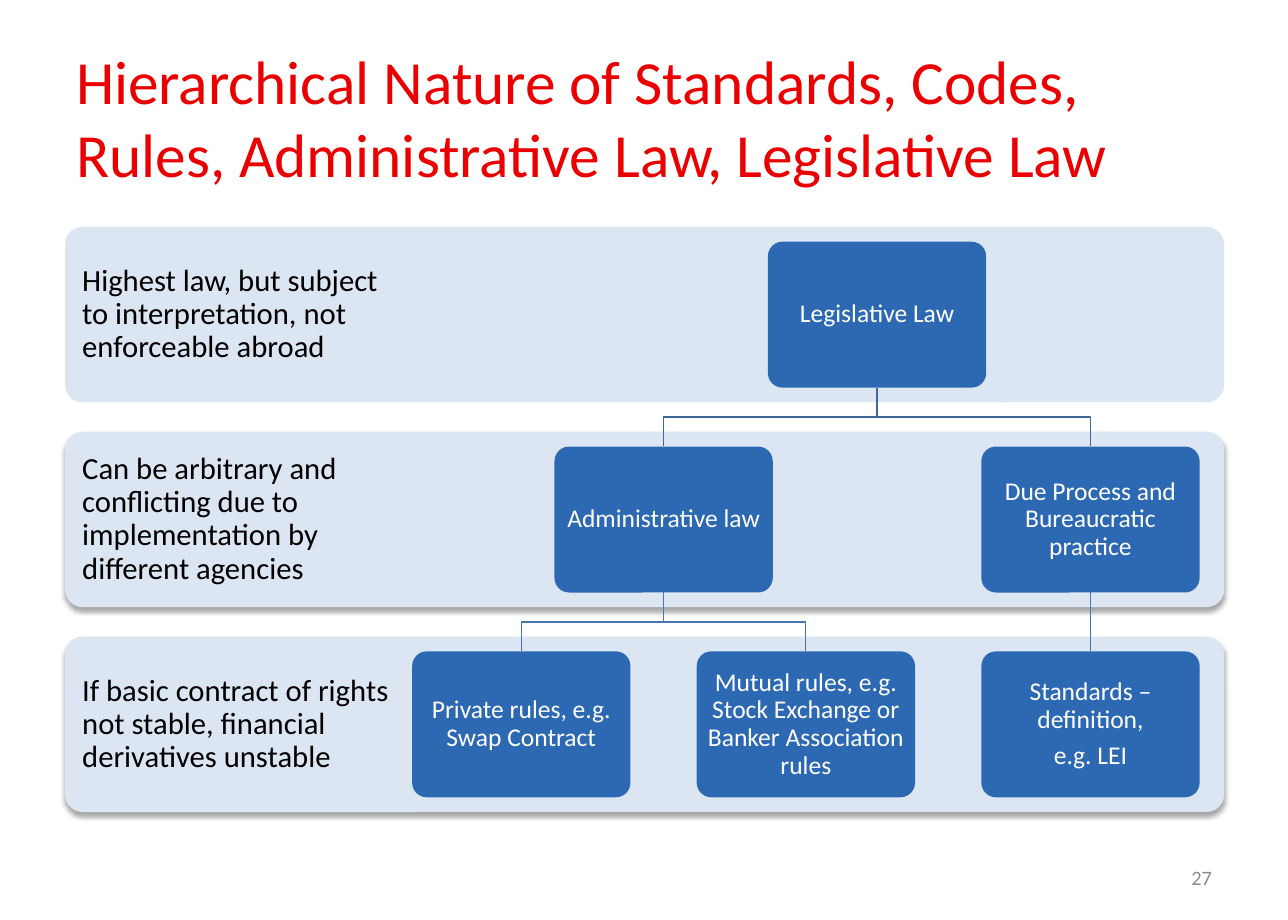
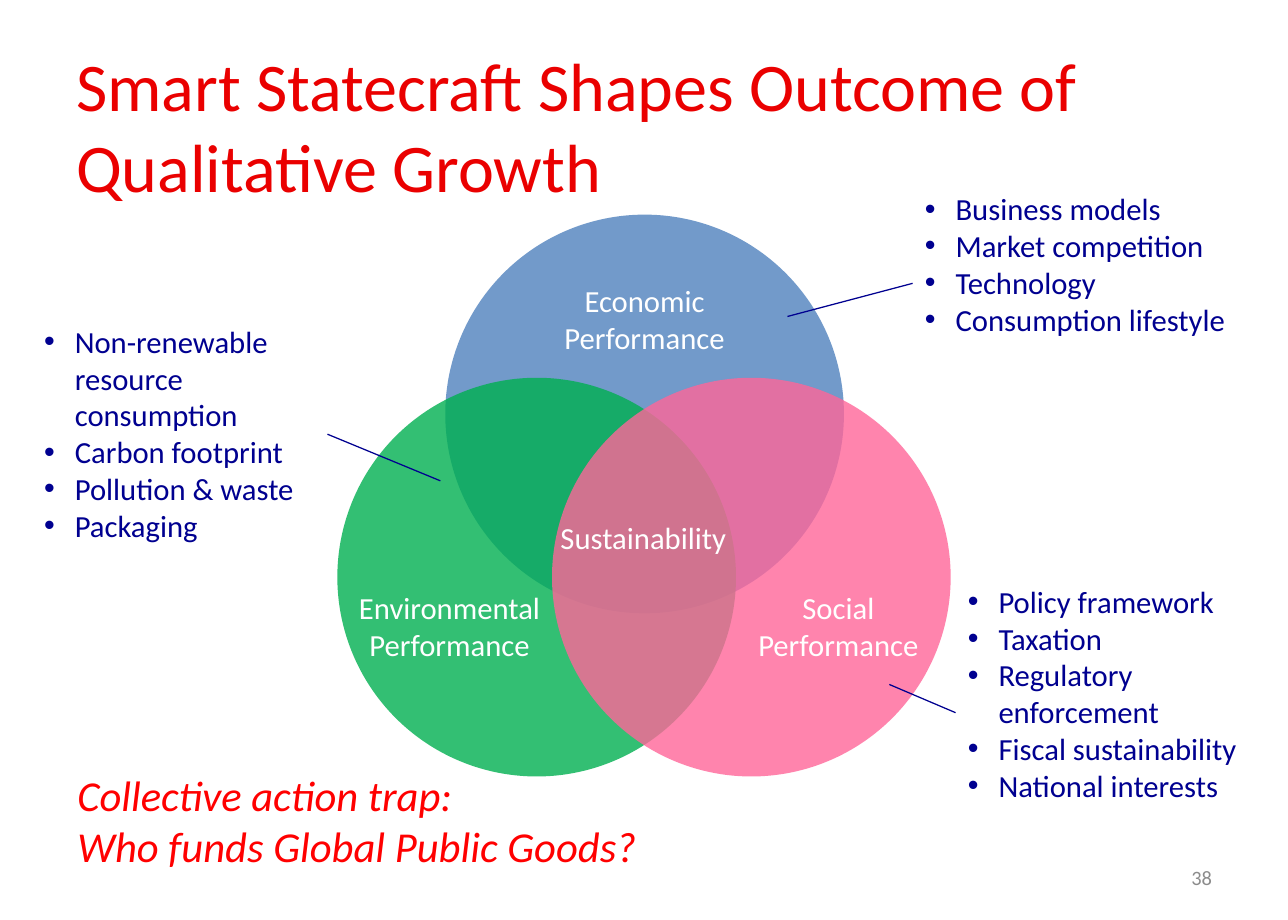
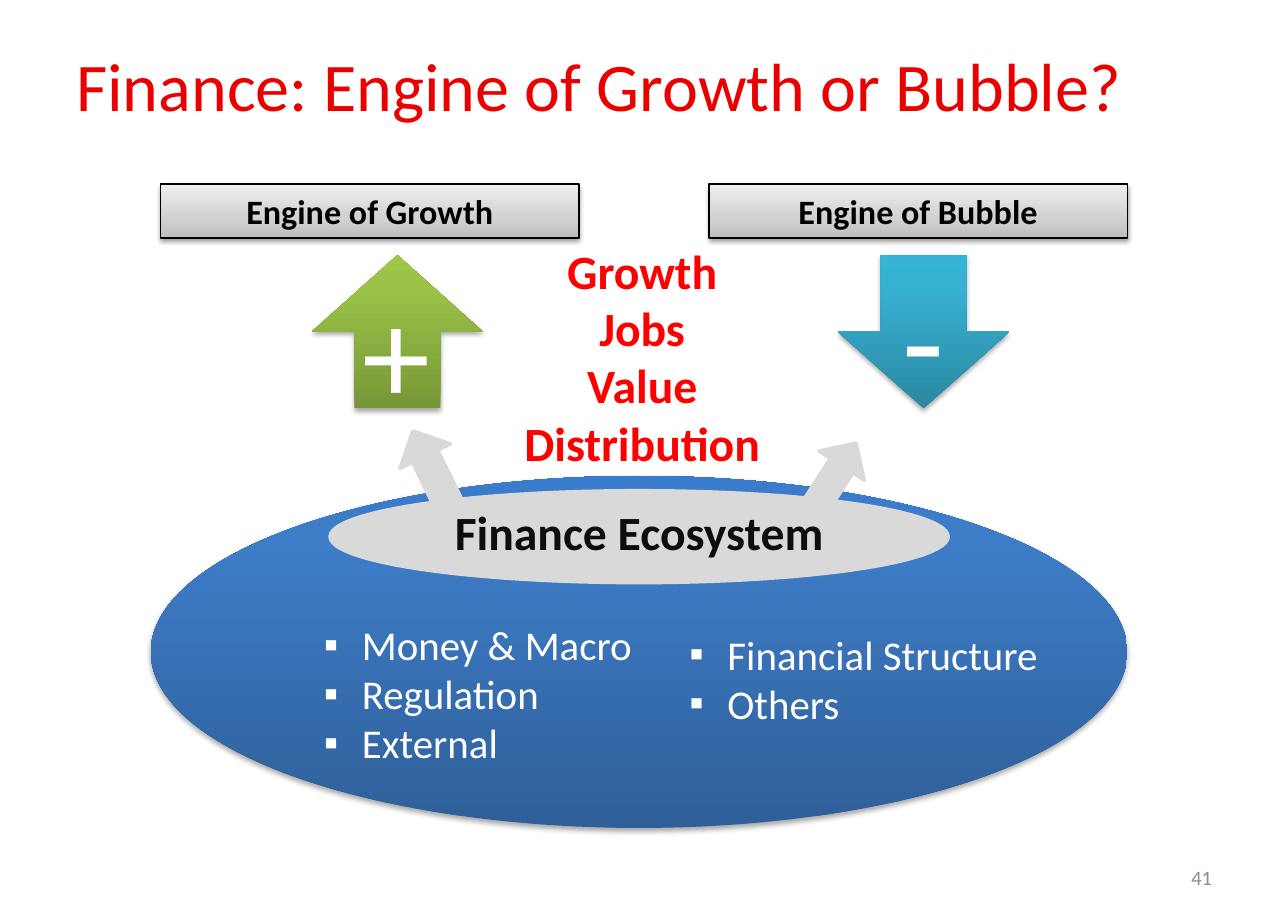
from lxml.etree import SubElement
from pptx import Presentation
from pptx.dml.color import RGBColor
from pptx.enum.shapes import MSO_CONNECTOR as Connector, MSO_SHAPE as Kind
from pptx.enum.text import MSO_ANCHOR as Anchor, MSO_AUTO_SIZE as AutoSize, PP_ALIGN as Align
from pptx.oxml.ns import qn
from pptx.util import Inches, Pt

# Shared style
FONT = "Calibri"
TITLE_RED, ACCENT_RED, NAVY = "EA0000", "FF0000", "000090"
WHITE, BLACK, PAGE_GREY, SILVER = "FFFFFF", "000000", "8C8C8C", "D9D9D9"
BAND_BLUE, NODE_BLUE = "DCE6F2", "2C69B2"
PLATE_STEEL = [(0, "BDBDBD"), (35, "D1D1D1"), (100, "EEEEEE")]
BASE_BLUE = [(0, "2F5F99"), (80, "3D7CC7"), (100, "3A7CCB")]
UP_GREEN = [(0, "779737"), (80, "9BC348"), (100, "9DC746")]
DOWN_TEAL = [(0, "2A88A2"), (80, "37B1D2"), (100, "34B4D6")]
MARGINS = (0.1, 0.05, 0.1, 0.05)
TITLE_ONLY, TWO_CONTENT, COMPARISON = 5, 3, 4


def rgb(code):
    return RGBColor.from_string(code)


class Deck:
    """Holds the presentation, its style and the slide being drawn."""

    def __init__(self):
        self.prs = Presentation()
        self.prs.slide_width, self.prs.slide_height = Inches(10.5), Inches(7.5)

    def start_slide(self, layout, title, size, page, width=9.45):
        self.slide = self.prs.slides.add_slide(self.prs.slide_layouts[layout])
        self.shapes = self.slide.shapes
        self.bodies = iter([p for p in self.slide.placeholders
                            if p.placeholder_format.idx])
        self.fill_placeholder(self.shapes.title, [title], (0.52, 0.3, width, 1.25),
                              size=size, color=TITLE_RED)
        self.text([str(page)], (7.53, 6.95, 2.45, 0.4), size=12, color=PAGE_GREY,
                  align=Align.RIGHT, anchor=Anchor.MIDDLE)

    def set_text(self, frame, lines, size=18, color=WHITE, bold=False, italic=False,
                 align=Align.CENTER, anchor=Anchor.TOP, margins=MARGINS, spacing=1,
                 after=0, wrap=True):
        frame.text = "\n".join(lines)
        frame.word_wrap, frame.auto_size = wrap, AutoSize.NONE
        frame.vertical_anchor = anchor
        (frame.margin_left, frame.margin_top,
         frame.margin_right, frame.margin_bottom) = map(Inches, margins)
        for para in frame.paragraphs:
            para.alignment, para.line_spacing = align, spacing
            para.space_before, para.space_after = Pt(0), Pt(after)
            font = para.font
            font.name, font.size = FONT, Pt(size)
            font.bold, font.italic = bold, italic
            font.color.rgb = rgb(color)

    def text(self, lines, at, **style):
        box = self.shapes.add_textbox(*map(Inches, at))
        self.set_text(box.text_frame, lines, **style)

    def fill_placeholder(self, holder, lines, at, **style):
        holder.left, holder.top, holder.width, holder.height = map(Inches, at)
        # Bring it in front of what is already drawn
        holder.element.getparent().append(holder.element)
        self.set_text(holder.text_frame, lines, align=Align.LEFT, **style)

    def body(self, lines, at, bullet=None, indent=0, **style):
        holder = next(self.bodies)
        self.fill_placeholder(holder, lines, at, **style)
        for para in holder.text_frame.paragraphs:
            props = para._p.get_or_add_pPr()
            props.set("marL", str(Inches(indent)))
            props.set("indent", str(-Inches(indent)))
            mark = props.makeelement(qn("a:buChar" if bullet else "a:buNone"))
            if bullet:
                mark.set("char", bullet)
            props.find(qn("a:defRPr")).addprevious(mark)

    def shape(self, kind, at, fill, alpha=None, line=None, line_width=0.75,
              shadow=None, rotation=0, corner=None, lines=None, **style):
        item = self.shapes.add_shape(kind, *map(Inches, at))
        item.rotation = rotation
        if corner:
            item.adjustments[0] = corner
        if isinstance(fill, list):
            self.gradient(item, fill)
        else:
            item.fill.solid()
            item.fill.fore_color.rgb = rgb(fill)
        if alpha:
            color = item.element.spPr.find(f"{qn('a:solidFill')}/{qn('a:srgbClr')}")
            SubElement(color, qn("a:alpha"), val=str(alpha * 1000))
        self.outline(item, line, line_width)
        if shadow:
            effects = item.element.spPr.find(qn("a:effectLst"))
            cast = SubElement(effects, qn("a:outerShdw"), blurRad=str(Pt(3.1)),
                              dist=str(Pt(1.8)), dir="5400000", rotWithShape="0")
            color = SubElement(cast, qn("a:srgbClr"), val=BLACK)
            SubElement(color, qn("a:alpha"), val=str(shadow * 1000))
        if lines:
            self.set_text(item.text_frame, lines, anchor=Anchor.MIDDLE, **style)

    def gradient(self, item, stops):
        item.fill.gradient()
        item.fill.gradient_angle = 90
        stop_list = item.element.spPr.find(f"{qn('a:gradFill')}/{qn('a:gsLst')}")
        for old in list(stop_list):
            stop_list.remove(old)
        for position, code in stops:
            stop = SubElement(stop_list, qn("a:gs"), pos=str(position * 1000))
            SubElement(stop, qn("a:srgbClr"), val=code)

    def outline(self, item, color, width):
        item.shadow.inherit = False
        if color:
            item.line.color.rgb, item.line.width = rgb(color), Pt(width)
        else:
            item.line.fill.background()

    def line(self, start, end, color):
        link = self.shapes.add_connector(Connector.STRAIGHT, *map(Inches, start + end))
        link.line.color.rgb, link.line.width = rgb(color), Pt(0.75)
        SubElement(link.element.spPr, qn("a:effectLst"))

    def elbow(self, start, end, color):
        """Join a parent to a child below it, turning half way down."""
        (x1, y1), (x2, y2) = start, end
        if x1 == x2:
            self.line(start, end, color)
            return
        middle = (y1 + y2) / 2
        route = self.shapes.build_freeform(Inches(x1), Inches(y1))
        route.add_line_segments([(Inches(x), Inches(y)) for x, y in
                                 ((x1, middle), (x2, middle), (x2, y2))], close=False)
        bend = route.convert_to_shape()
        bend.fill.background()
        self.outline(bend, color, 0.75)


def hierarchy(deck):
    deck.start_slide(TITLE_ONLY, "Hierarchical Nature of Standards, Codes, Rules, "
                     "Administrative Law, Legislative Law", 36, 27)
    band_h, pitch, node_w, node_h = 1.43, 1.67, 1.78, 1.19
    tops = [1.85 + pitch * level for level in range(3)]

    # Level bands
    levels = ["Highest law, but subject to interpretation, not enforceable abroad",
              "Can be arbitrary and conflicting due to implementation by different agencies",
              "If basic contract of rights not stable, financial derivatives unstable"]
    for level, label in enumerate(levels):
        deck.shape(Kind.ROUNDED_RECTANGLE, (0.53, tops[level], 9.45, band_h), BAND_BLUE,
                   corner=0.1, shadow=35 if level else None, lines=[label],
                   color=BLACK, align=Align.LEFT, spacing=0.9,
                   margins=(0.1, 0.1, 6.7, 0.1))

    # Law tree: leaves evenly spaced, each parent centred over its children
    leaf_xs = [3.36 + 2.32 * i for i in range(3)]
    admin_x, process_x = (leaf_xs[0] + leaf_xs[1]) / 2, leaf_xs[2]
    law_x = (admin_x + process_x) / 2
    nodes = [
        (0, law_x, None, ["Legislative Law"]),
        (1, admin_x, law_x, ["Administrative law"]),
        (1, process_x, law_x, ["Due Process and Bureaucratic practice"]),
        (2, leaf_xs[0], admin_x, ["Private rules, e.g. Swap Contract"]),
        (2, leaf_xs[1], admin_x,
         ["Mutual rules, e.g. Stock Exchange or Banker Association rules"]),
        (2, leaf_xs[2], process_x, ["Standards – definition,", "e.g. LEI"]),
    ]
    for level, x, parent_x, label in nodes:
        top = tops[level] + (band_h - node_h) / 2
        if parent_x is not None:
            deck.elbow((parent_x + node_w / 2, top - pitch + node_h),
                       (x + node_w / 2, top), "3F6797" if level == 1 else "4875AC")
        deck.shape(Kind.ROUNDED_RECTANGLE, (x, top, node_w, node_h), NODE_BLUE,
                   corner=0.1, lines=label, size=15, spacing=0.9, after=5,
                   margins=(0.03,) * 4)


def statecraft(deck):
    deck.start_slide(COMPARISON, "Smart Statecraft Shapes Outcome of Qualitative Growth",
                     40, 38, width=9.63)

    # Overlapping circles and their labels
    for x, y, color in ((3.63, 1.75, "4F81BD"), (2.75, 3.08, "00B050"),
                        (4.5, 3.08, "FF6699")):
        deck.shape(Kind.OVAL, (x, y, 3.25, 3.25), color, alpha=80)
    for label, at in (("Economic Performance", (4.17, 2.25, 2.17, 0.71)),
                      ("Environmental Performance", (2.75, 4.75, 1.83, 0.71)),
                      ("Social Performance", (5.92, 4.75, 1.83, 0.71)),
                      ("Sustainability", (4.33, 4.18, 1.83, 0.4))):
        deck.text([label], at)

    # Factors, each with a line to its circle
    factors = [
        (["Non-renewable resource consumption", "Carbon footprint",
          "Pollution & waste", "Packaging"],
         (0.26, 2.58, 2.4, 1.92), (2.67, 3.54), (3.59, 3.92)),
        (["Business models", "Market competition", "Technology",
          "Consumption lifestyle"],
         (7.44, 1.5, 2.71, 1.62), (6.42, 2.58), (7.44, 2.31)),
        (["Policy framework", "Taxation", "Regulatory enforcement",
          "Fiscal sustainability", "National interests"],
         (7.79, 4.7, 2.63, 2.22), (7.25, 5.58), (7.79, 5.81)),
    ]
    for items, at, start, end in factors:
        deck.body(items, at, bullet="•", indent=0.25, color=NAVY)
        deck.line(start, end, NAVY)

    # Closing question
    deck.body(["Collective action trap:", "Who funds Global Public Goods?"],
              (0.53, 6.22, 6.48, 0.94), size=25, color=ACCENT_RED, italic=True)


def finance(deck):
    deck.start_slide(TWO_CONTENT, "Finance: Engine of Growth or Bubble?", 40, 41)

    # Ecosystem base, with arrows rising from its rim
    deck.shape(Kind.OVAL, (1.23, 3.88, 7.96, 2.87), BASE_BLUE, shadow=35)
    for at, turn in (((6.34, 3.74, 0.83, 0.44), 122.8), ((3.18, 3.58, 0.66, 0.46), 64.1)):
        deck.shape(Kind.LEFT_ARROW, at, SILVER, line=SILVER, line_width=2, rotation=turn)
    deck.shape(Kind.OVAL, (2.69, 4, 5.04, 0.75), SILVER, line=SILVER, line_width=2,
               lines=["Finance Ecosystem"], size=28, color="0D0D0D", bold=True,
               margins=(0, 0, 0, 0.08))

    # The two engines
    for name, plate_x, kind, arrow_x, fill, sign, sign_at in (
            ("Engine of Growth", 1.31, Kind.UP_ARROW, 2.54, UP_GREEN,
             "+", (2.85, 2.14, 0.76, 1.45)),
            ("Engine of Bubble", 5.78, Kind.DOWN_ARROW, 6.83, DOWN_TEAL,
             "-", (7.25, 2.02, 0.55, 1.45))):
        deck.shape(Kind.RECTANGLE, (plate_x, 1.5, 3.41, 0.44), PLATE_STEEL, line=BLACK,
                   shadow=38, lines=[name], size=20, color=BLACK, bold=True)
        deck.shape(kind, (arrow_x, 2.08, 1.4, 1.25), fill, shadow=35)
        deck.text([sign], sign_at, size=80, wrap=False)

    # Outcomes and components
    deck.text(["Growth", "Jobs", "Value", "Distribution"], (3.88, 1.92, 2.71, 1.99),
              size=28, color=ACCENT_RED, bold=True)
    for parts, at in ((["Money & Macro", "Regulation", "External"], (2.54, 5, 2.89, 1.31)),
                      (["Financial Structure", "Others"], (5.52, 5.08, 3.23, 0.91))):
        deck.body(parts, at, bullet="▪", indent=0.31, size=24)


def main():
    deck = Deck()
    for draw in (hierarchy, statecraft, finance):
        draw(deck)
    deck.prs.save("out.pptx")


if __name__ == "__main__":
    main()
